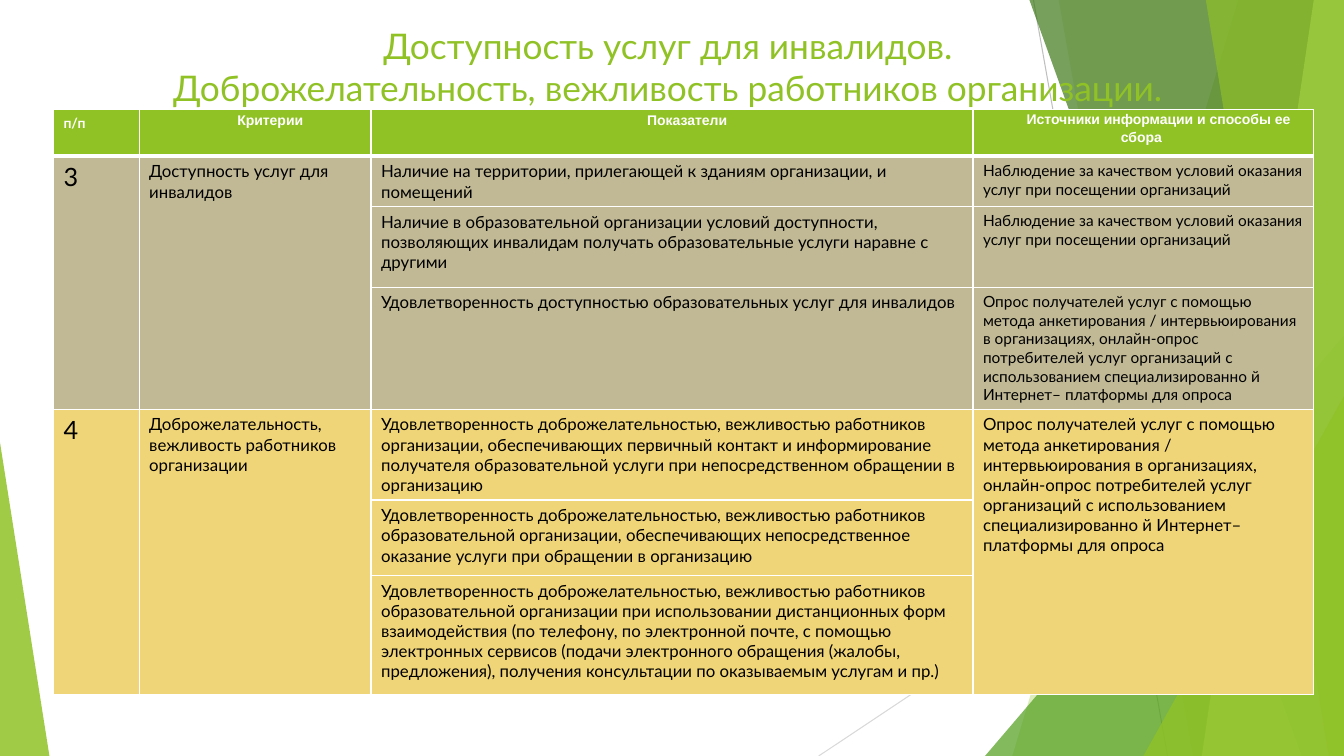
from lxml.etree import SubElement
from pptx import Presentation
from pptx.dml.color import RGBColor
from pptx.enum.shapes import MSO_CONNECTOR, MSO_SHAPE
from pptx.enum.text import PP_ALIGN
from pptx.oxml.ns import qn
from pptx.util import Inches, Pt

WHITE = RGBColor(0xFF, 0xFF, 0xFF)
BLACK = RGBColor(0x00, 0x00, 0x00)
LIME = RGBColor(0x90, 0xC2, 0x26)
GREEN = RGBColor(0x54, 0xA0, 0x21)
DARK_GREEN = RGBColor(0x3F, 0x78, 0x19)
PALE_LIME = RGBColor(0xC0, 0xE4, 0x74)
GRAY = RGBColor(0xBF, 0xBF, 0xBF)
LIGHT_GRAY = RGBColor(0xD9, 0xD9, 0xD9)
KHAKI = RGBColor(0xC1, 0xB9, 0x95)
YELLOW = RGBColor(0xF0, 0xD5, 0x78)

W, H = 13.33, 7.5

TITLE = ["Доступность услуг для инвалидов. ",
         "Доброжелательность, вежливость работников организации. "]
HEADERS = ["п/п", "Критерии", "Показатели", "Источники информации и способы ее сбора "]
OBSERVATION = "Наблюдение за качеством условий оказания услуг при посещении организаций"
SURVEY = ("Опрос получателей услуг с помощью метода анкетирования / интервьюирования "
          "в организациях, онлайн-опрос потребителей услуг организаций с использованием "
          "специализированно й Интернет– платформы для опроса")
KINDNESS = "Удовлетворенность доброжелательностью, вежливостью работников "

# Each group: number, criterion, fill, indicators, sources, source text size
GROUPS = [
    ("3", "Доступность услуг для инвалидов", KHAKI,
     ["Наличие на территории, прилегающей к зданиям организации, и помещений",
      "Наличие в образовательной организации условий доступности, позволяющих "
      "инвалидам получать образовательные услуги наравне с другими",
      "Удовлетворенность доступностью образовательных услуг для инвалидов"],
     [OBSERVATION, OBSERVATION, SURVEY], 11),
    ("4", "Доброжелательность, вежливость работников организации", YELLOW,
     [KINDNESS + "организации, обеспечивающих первичный контакт и информирование "
      "получателя образовательной услуги при непосредственном обращении в организацию",
      KINDNESS + "образовательной организации, обеспечивающих непосредственное "
      "оказание услуги при обращении в организацию",
      KINDNESS + "образовательной организации при использовании дистанционных форм "
      "взаимодействия (по телефону, по электронной почте, с помощью электронных "
      "сервисов (подачи электронного обращения (жалобы, предложения), получения "
      "консультации по оказываемым услугам и пр.)"],
     [SURVEY], 12),
]
COLS = [0.85, 2.3, 5.97, 3.38]
ROWS = [0.46, 0.5, 0.8, 1.21, 0.9, 0.75, 1.18]


class SlideBuilder:
    font = "Lato"

    def __init__(self, s):
        self.s = s

    def line(self, start, end, color):
        c = self.s.shapes.add_connector(
            MSO_CONNECTOR.STRAIGHT, *[Inches(v) for v in start + end])
        c.line.color.rgb = color
        c.line.width = Pt(0.75)
        SubElement(c._element.spPr, qn("a:effectLst"))

    def paint(self, sp, color, alpha):
        sp.shadow.inherit = False
        sp.line.fill.background()
        sp.fill.solid()
        sp.fill.fore_color.rgb = color
        clr = sp._element.spPr.find(qn("a:solidFill"))[0]
        SubElement(clr, qn("a:alpha"), val=str(alpha * 1000))

    def band(self, top, bottom, color, alpha):
        """Band from a slanted left edge to the right slide edge."""
        fb = self.s.shapes.build_freeform(Inches(top), 0)
        corners = [(W, 0), (W, H), (bottom, H)]
        fb.add_line_segments([(Inches(x), Inches(y)) for x, y in corners])
        self.paint(fb.convert_to_shape(), color, alpha)

    def triangle(self, x, y, w, apex, color, alpha):
        """Triangle standing on the bottom slide edge."""
        sp = self.s.shapes.add_shape(MSO_SHAPE.ISOSCELES_TRIANGLE, Inches(x),
                                     Inches(y), Inches(w), Inches(H - y))
        sp.adjustments[0] = apex
        self.paint(sp, color, alpha)

    def run(self, p, text, size, color, font=None, bold=False):
        r = p.add_run()
        r.text = text
        r.font.name = font or self.font
        r.font.size = Pt(size)
        r.font.bold = bold
        r.font.color.rgb = color

    def title(self, lines, x, y, w, h, size):
        tf = self.s.shapes.add_textbox(Inches(x), Inches(y), Inches(w), Inches(h)).text_frame
        tf.word_wrap = True
        p = tf.paragraphs[0]
        p.alignment = PP_ALIGN.CENTER
        for i, text in enumerate(lines):
            if i:
                p.add_line_break()
            self.run(p, text, size, LIME)

    def table(self, x, y, cols, rows):
        t = self.s.shapes.add_table(len(rows), len(cols), Inches(x), Inches(y),
                                    Inches(sum(cols)), Inches(sum(rows))).table
        t.first_row = t.horz_banding = False
        for col, w in zip(t.columns, cols):
            col.width = Inches(w)
        for row, h in zip(t.rows, rows):
            row.height = Inches(h)
        return t

    def cell(self, cell, fill, bottom=1, top=1):
        tcPr = cell._tc.get_or_add_tcPr()
        for side, width in (("L", 1), ("R", 1), ("T", top), ("B", bottom)):
            ln = SubElement(tcPr, qn("a:ln" + side), w=str(Pt(width)))
            SubElement(SubElement(ln, qn("a:solidFill")), qn("a:srgbClr"), val=str(WHITE))
        cell.fill.solid()
        cell.fill.fore_color.rgb = fill

    def header_text(self, cell, text, spacing):
        cell.margin_left = cell.margin_right = Inches(0.04)
        cell.margin_top = cell.margin_bottom = 0
        p = cell.text_frame.paragraphs[0]
        p.alignment = PP_ALIGN.CENTER
        p.line_spacing = spacing
        p._p.get_or_add_pPr().set("indent", str(Inches(0.3)))
        self.run(p, text, 10, WHITE, "Arial", True)


def main():
    prs = Presentation()
    prs.slide_width, prs.slide_height = Inches(W), Inches(H)
    b = SlideBuilder(prs.slides.add_slide(prs.slide_layouts[6]))

    # Background facets
    b.line((10.25, 0), (11.58, H), GRAY)
    b.line((W, 4.03), (8.12, H), LIGHT_GRAY)
    b.band(12.28, 10.04, LIME, 30)
    b.band(10.5, 11.83, LIME, 20)
    b.triangle(9.77, 3.33, 3.56, 1, GREEN, 72)
    b.band(10.21, 12.91, DARK_GREEN, 70)
    b.band(13.03, 11.92, PALE_LIME, 70)
    b.band(11.96, 13.18, LIME, 65)
    b.triangle(11.34, 3.93, 1.99, 1, LIME, 80)
    b.triangle(0, 4.39, 0.49, 0, LIME, 85)

    # Title
    b.title(TITLE, 0.92, 0.19, 11.5, 0.79, 25.2)

    # Table header
    t = b.table(0.53, 1.09, COLS, ROWS)
    for c, text in enumerate(HEADERS):
        cell = t.cell(0, c)
        b.cell(cell, LIME, bottom=3)
        if c:
            b.header_text(cell, text, 1.15 if c == 3 else 1.2)
        else:
            b.run(cell.text_frame.paragraphs[0], text, 10, WHITE, bold=True)

    # Table body: three rows for each criterion
    for g, (number, criterion, fill, indicators, sources, size) in enumerate(GROUPS):
        first = 1 + 3 * g
        for r in range(first, first + 3):
            for c in range(len(COLS)):
                b.cell(t.cell(r, c), fill, top=3 if r == 1 else 1)
        columns = [([number], 18), ([criterion], 12), (indicators, 12), (sources, size)]
        for c, (texts, sz) in enumerate(columns):
            if len(texts) == 1:
                t.cell(first, c).merge(t.cell(first + 2, c))
            for i, text in enumerate(texts):
                b.run(t.cell(first + i, c).text_frame.paragraphs[0], text, sz, BLACK)

    prs.save("out.pptx")


if __name__ == "__main__":
    main()
